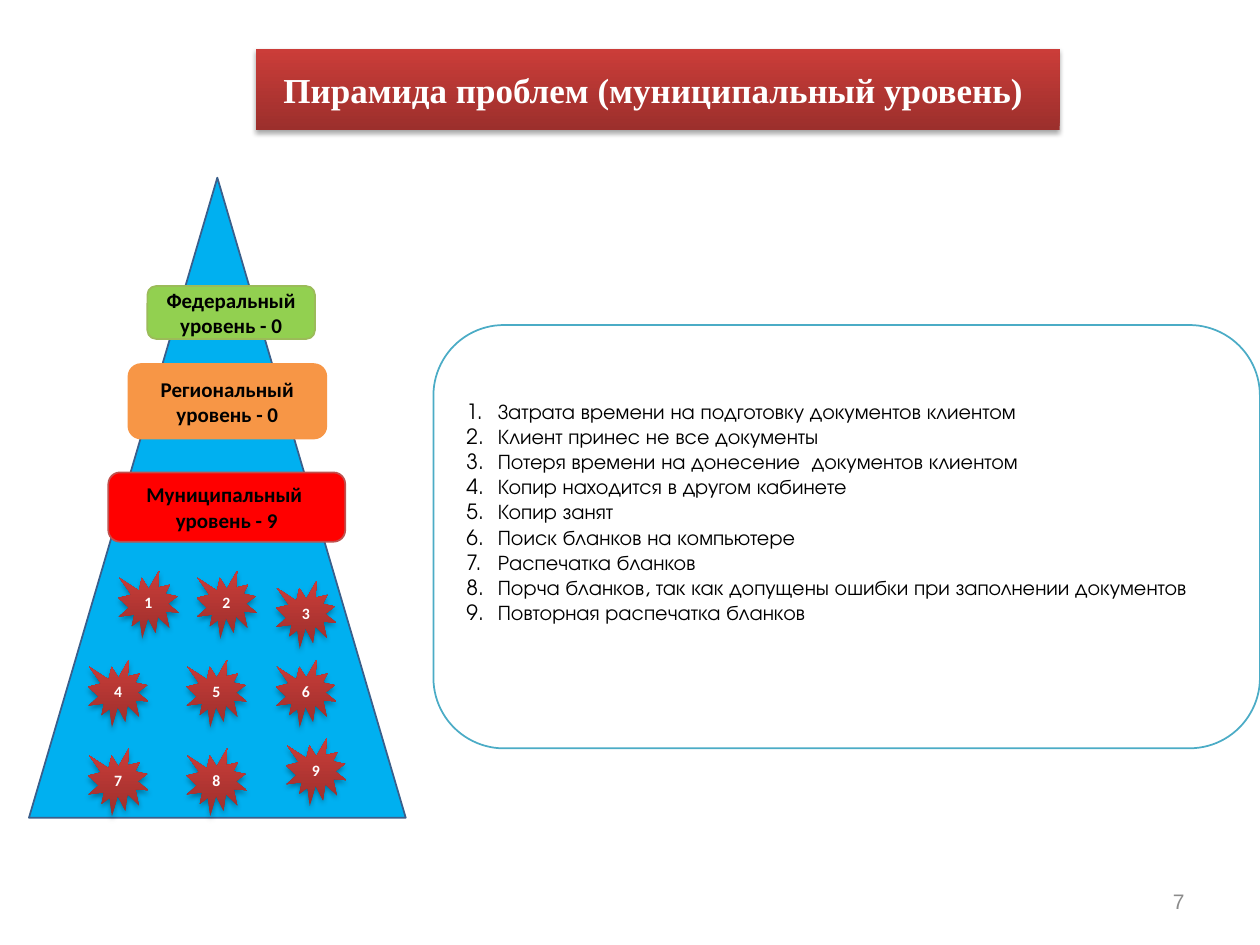
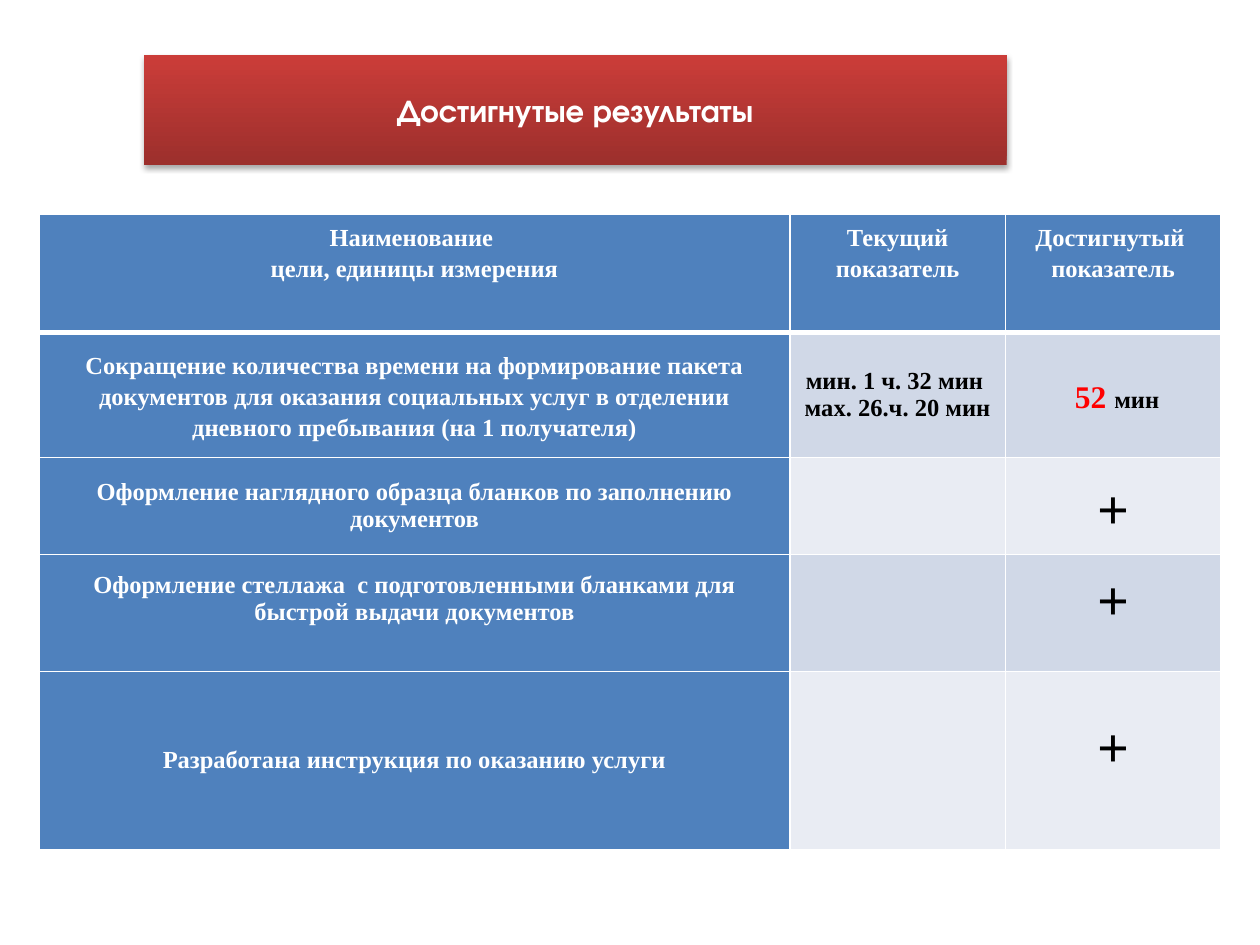
from dataclasses import dataclass

from lxml import etree
from pptx import Presentation
from pptx.dml.color import RGBColor
from pptx.enum.shapes import MSO_SHAPE as Preset
from pptx.enum.text import MSO_ANCHOR as Anchor, MSO_AUTO_SIZE as AutoSize, PP_ALIGN as Align
from pptx.oxml.ns import qn
from pptx.util import Emu, Inches, Pt

# ---- Content: boxes are (left, top, width, height) in percent of the slide ----
PYRAMID_TITLE = ("Пирамида проблем (муниципальный уровень) ", (20.3, 5.2, 63.8, 8.53))
RESULTS_TITLE = ("Достигнутые результаты", (11.4, 5.87, 68.5, 11.6))
PAGE_NUMBER = ("7", (71.7, 92.67, 23.3, 5.33))

PYRAMID_BOX = (2.3, 18.8, 29.9, 67.73)
LEVELS = [  # text, box, fill, line
    ("Федеральный уровень - 0", (11.7, 30.27, 13.3, 5.6), "92D050", "9BBB59"),
    ("Региональный уровень - 0", (10.2, 38.53, 15.7, 7.87), "F79646", "F79646"),
    ("Муниципальный  уровень - 9", (8.6, 50, 18.8, 7.33), "FF0000", "C0504D"),
]

PROBLEMS_BOX = (34.4, 34.4, 65.6, 44.8)
PROBLEMS = [
    "Затрата времени на подготовку документов клиентом",
    "Клиент принес не все документы",
    "Потеря времени на донесение  документов клиентом",
    "Копир находится в другом кабинете",
    "Копир занят",
    "Поиск бланков на компьютере",
    "Распечатка бланков",
    "Порча бланков, так как допущены ошибки при заполнении документов",
    "Повторная распечатка бланков",
]

# Numbered bursts: a 3 x 3 grid, with a few moved off it
BURST_COLUMNS = (7, 14.8, 21.9)
BURST_TOP, BURST_STEP = 60.4, 9.4
BURST_SIZE = (4.8, 7.2)
BURST_SHIFTS = {1: (2.4, 0), 2: (0.8, 0), 3: (0, 1.07), 9: (0.8, -1.07)}

# Table rows: (height, cells); a cell is (paragraphs, line spacing, extra bottom
# inset) or None, and a paragraph is a list of (text, style name) runs
TABLE_BOX = (3.1, 22.67, 93.8, 67.2)
COLUMN_WIDTHS = (59.6, 17.1, 17.1)
LOOSE = 1.15
RESULT_ROWS = [
    (12.53, [
        ([[("Наименование ", "label")], [("цели, единицы измерения", "label")]], LOOSE, 0),
        ([[("Текущий показатель", "label")]], LOOSE, 0),
        ([[("Достигнутый ", "label")], [("показатель", "label")]], LOOSE, 0),
    ]),
    (13.2, [
        ([[("Сокращение количества времени на формирование пакета документов для оказания "
            "социальных услуг в отделении дневного пребывания (на 1 получателя)", "label")]],
         LOOSE, 0),
        ([[("мин. 1 ч. 32 мин ", "value")], [("мах. 26.ч. 20 мин", "value")]], 1, 0),
        ([[(" 52 ", "accent"), ("мин", "value")]], LOOSE, 0),
    ]),
    (10.27, [
        ([[("Оформление наглядного образца бланков по заполнению документов", "label")]], 1, 0),
        None,
        ([[("+", "plus")]], LOOSE, 0),
    ]),
    (12.27, [
        ([[("Оформление стеллажа  с подготовленными бланками для быстрой выдачи документов",
            "label")]], 1, 0.22),
        None,
        ([[("+", "plus")]], LOOSE, 0.26),
    ]),
    (18.93, [
        ([[("Разработана инструкция по оказанию услуги", "label")]], 1, 0),
        None,
        ([[("+", "plus")]], LOOSE, 0.26),
    ]),
]


# ---- Theme ----
@dataclass(frozen=True)
class TextStyle:
    font: str
    size: int
    color: str
    bold: bool = True


class Theme:
    serif, sans, geometric = "Times New Roman", "Calibri", "TeX Gyre Adventor"
    white, black, pyramid, pyramid_line = "FFFFFF", "000000", "00B0F0", "3A5F8B"
    red_gradient = ("9C2F2C", "CB3D39")
    list_line = "4BACC6"
    header, bands = "4F81BD", ("D0D8E7", "E9ECF3")
    thin, thick = 0.96, 3
    styles = {
        "pyramid title": TextStyle(serif, 20, white),
        "results title": TextStyle(geometric, 18, white),
        "level": TextStyle(sans, 12, black),
        "burst": TextStyle(sans, 9, white),
        "problem": TextStyle(geometric, 12, black, False),
        "page": TextStyle("Arial", 12, "8B8B8B", False),
        "label": TextStyle(serif, 14, white),
        "value": TextStyle(serif, 14, black),
        "accent": TextStyle(serif, 18, "FF0000"),
        "plus": TextStyle(serif, 32, black),
    }


presentation = Presentation()
presentation.slide_width, presentation.slide_height = Inches(10), Inches(7.5)


# ---- Helpers ----
def across(percent):
    return Emu(round(presentation.slide_width * percent / 100))


def down(percent):
    return Emu(round(presentation.slide_height * percent / 100))


def place(box):
    left, top, width, height = box
    return across(left), down(top), across(width), down(height)


def add_run(paragraph, text, style_name):
    style = Theme.styles[style_name]
    run = paragraph.add_run()
    run.text = text
    run.font.name, run.font.size, run.font.bold = style.font, Pt(style.size), style.bold
    run.font.color.rgb = RGBColor.from_string(style.color)


def write(frame, paragraphs, align=Align.CENTER, spacing=None):
    """Fill a text frame with paragraphs, each a list of (text, style) runs."""
    for index, runs in enumerate(paragraphs):
        paragraph = frame.paragraphs[0] if index == 0 else frame.add_paragraph()
        paragraph.alignment = align
        if spacing:
            paragraph.line_spacing = spacing
        for text, style_name in runs:
            add_run(paragraph, text, style_name)


def add_figure(slide, preset, box, fill=None, line=None):
    shape = slide.shapes.add_shape(preset, *place(box))
    shape.shadow.inherit = False
    if fill:
        shape.fill.solid()
        shape.fill.fore_color.rgb = RGBColor.from_string(fill)
    if line:
        shape.line.color.rgb = RGBColor.from_string(line)
        shape.line.width = Pt(1)
    shape.text_frame.word_wrap = True
    shape.text_frame.vertical_anchor = Anchor.MIDDLE
    return shape


def make_glossy_red(shape):
    """Red gradient, lighter at the top, over a soft shadow."""
    shape.fill.gradient()
    shape.fill.gradient_angle = 90
    for stop, color in zip(shape.fill.gradient_stops, Theme.red_gradient):
        stop.color.rgb = RGBColor.from_string(color)
    shape.line.fill.background()
    shape.shadow.inherit = False
    effects = shape._element.spPr.find(qn("a:effectLst"))
    shadow = etree.SubElement(effects, qn("a:outerShdw"), blurRad=str(Pt(3.1)),
                              dist=str(Pt(1.8)), dir="5400000", rotWithShape="0")
    color = etree.SubElement(shadow, qn("a:srgbClr"), val=Theme.black)
    etree.SubElement(color, qn("a:alpha"), val="35000")


def add_titled_slide(title, style_name):
    text, box = title
    slide = presentation.slides.add_slide(presentation.slide_layouts[5])
    banner = slide.shapes.title
    banner.left, banner.top, banner.width, banner.height = place(box)
    make_glossy_red(banner)
    frame = banner.text_frame
    frame.word_wrap, frame.auto_size = True, AutoSize.NONE
    frame.vertical_anchor = Anchor.MIDDLE
    write(frame, [[(text, style_name)]])
    return slide


def number_paragraph(paragraph):
    properties = paragraph._p.get_or_add_pPr()
    properties.set("marL", str(Inches(0.25)))
    properties.set("indent", str(-Inches(0.25)))
    etree.SubElement(properties, qn("a:buFont"), typeface="+mj-lt")
    etree.SubElement(properties, qn("a:buAutoNum"), type="arabicPeriod")


def add_borders(cell, top, bottom):
    properties = cell._tc.get_or_add_tcPr()
    widths = {"lnL": Theme.thin, "lnR": Theme.thin, "lnT": top, "lnB": bottom}
    for side, width in widths.items():
        border = etree.SubElement(properties, qn(f"a:{side}"), w=str(Pt(width)))
        fill = etree.SubElement(border, qn("a:solidFill"))
        etree.SubElement(fill, qn("a:srgbClr"), val=Theme.white)


# ---- Slides ----
def build_pyramid_slide():
    slide = add_titled_slide(PYRAMID_TITLE, "pyramid title")

    # Pyramid and its levels
    add_figure(slide, Preset.ISOSCELES_TRIANGLE, PYRAMID_BOX, Theme.pyramid, Theme.pyramid_line)
    for text, box, fill, line in LEVELS:
        level = add_figure(slide, Preset.ROUNDED_RECTANGLE, box, fill, line)
        write(level.text_frame, [[(text, "level")]])

    # Numbered list of problems, set a little above the middle
    panel = add_figure(slide, Preset.ROUNDED_RECTANGLE, PROBLEMS_BOX, Theme.white, Theme.list_line)
    panel.text_frame.margin_bottom = Inches(0.45)
    write(panel.text_frame, [[(problem, "problem")] for problem in PROBLEMS], Align.JUSTIFY)
    for paragraph in panel.text_frame.paragraphs:
        number_paragraph(paragraph)

    # One burst for each problem
    for index in range(len(PROBLEMS)):
        row, column = divmod(index, len(BURST_COLUMNS))
        shift_x, shift_y = BURST_SHIFTS.get(index + 1, (0, 0))
        corner = (BURST_COLUMNS[column] + shift_x, BURST_TOP + row * BURST_STEP + shift_y)
        burst = add_figure(slide, Preset.EXPLOSION1, corner + BURST_SIZE)
        make_glossy_red(burst)
        write(burst.text_frame, [[(str(index + 1), "burst")]])

    # Page number
    number, box = PAGE_NUMBER
    frame = slide.shapes.add_textbox(*place(box)).text_frame
    frame.word_wrap, frame.vertical_anchor = True, Anchor.MIDDLE
    write(frame, [[(number, "page")]], Align.RIGHT)


def build_results_slide():
    slide = add_titled_slide(RESULTS_TITLE, "results title")
    table = slide.shapes.add_table(len(RESULT_ROWS), len(COLUMN_WIDTHS), *place(TABLE_BOX)).table
    table.first_row = table.horz_banding = False
    for column, width in zip(table.columns, COLUMN_WIDTHS):
        column.width = across(width)

    for row, (height, contents) in enumerate(RESULT_ROWS):
        table.rows[row].height = down(height)
        for column, content in enumerate(contents):
            cell = table.cell(row, column)
            add_borders(cell, Theme.thick if row == 1 else Theme.thin,
                        Theme.thick if row == 0 else Theme.thin)
            is_heading = row == 0 or column == 0
            cell.fill.solid()
            cell.fill.fore_color.rgb = RGBColor.from_string(
                Theme.header if is_heading else Theme.bands[(row - 1) % 2])
            if content is None:
                continue
            paragraphs, spacing, extra_bottom = content
            cell.margin_left = cell.margin_right = Inches(0.07)
            cell.margin_top = Inches(0.05)
            cell.margin_bottom = Inches(0.05 + extra_bottom)
            cell.vertical_anchor = Anchor.TOP if row == 0 else Anchor.MIDDLE
            write(cell.text_frame, paragraphs, spacing=spacing)


if __name__ == "__main__":
    build_pyramid_slide()
    build_results_slide()
    presentation.save("out.pptx")
